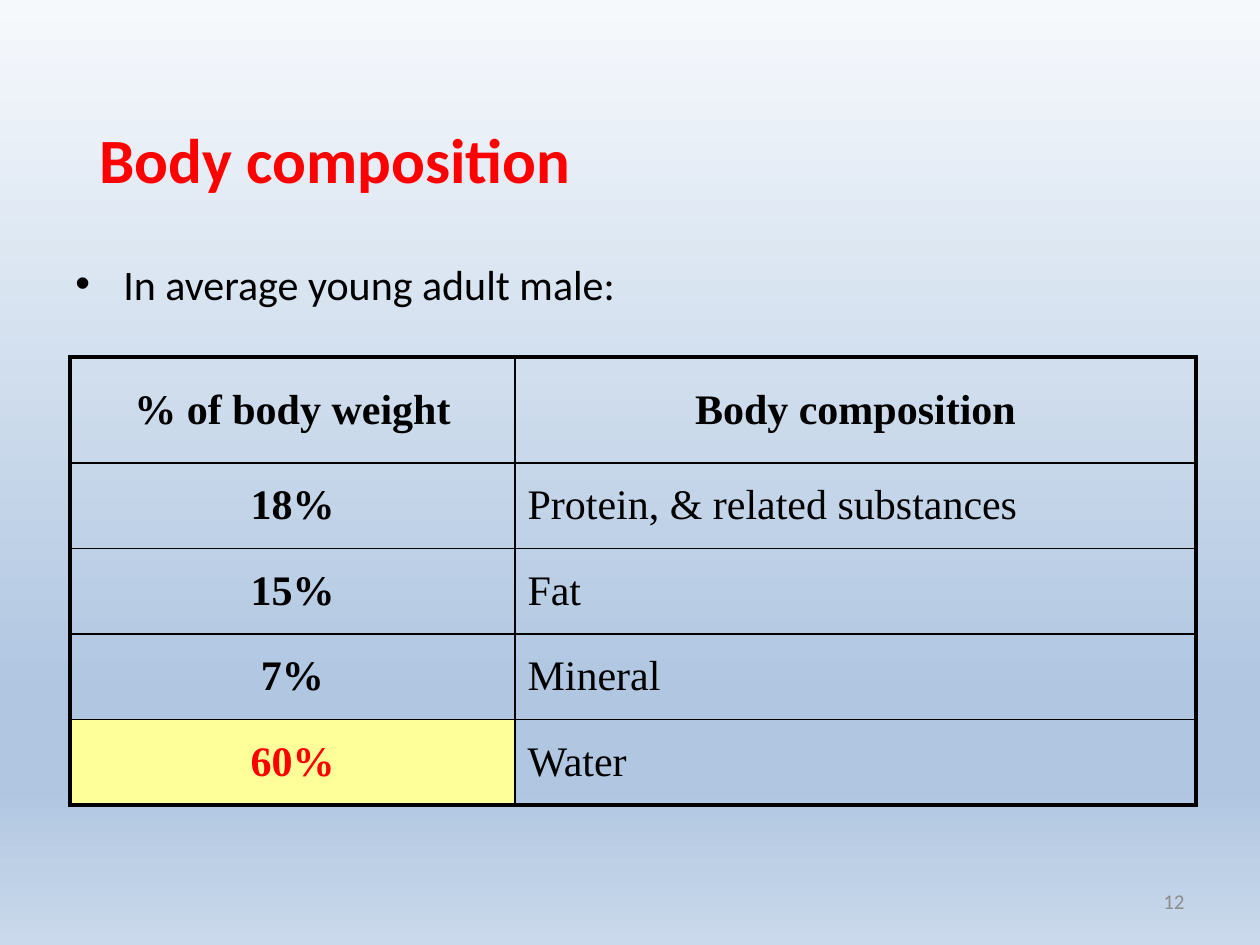
from lxml import etree
from pptx import Presentation
from pptx import util as u
from pptx.dml.color import RGBColor
from pptx.enum import text as t
from pptx.oxml.ns import qn

PX = 914400 / 126
BLACK, RED, GREY, YELLOW = "000000", "FF0000", "8C8C8C", "FFFF99"
SERIF = "Times New Roman"
STOPS = [(0, "F6F9FC"), (74, "B0C6E1"), (83, "B0C6E1"), (100, "CAD9EB")]
TITLE = "Body composition"
INTRO = "In average young adult male:"
NUMBER = "12"
ROWS = [
    ("% of body weight", "Body composition"),
    ("18%", "Protein, & related substances"),
    ("15%", "Fat"),
    ("7%", "Mineral"),
    ("60%", "Water"),
]
LEFT, TOP, HIGH, HEAD = 70, 357, 448, 106
COLS = [445, 681]
THIN, THICK = 1, 2.25


def px(n):
    return u.Emu(round(n * PX))


def rgb(code):
    return RGBColor.from_string(code)


def add(parent, tag, **attrs):
    node = etree.SubElement(parent, qn(tag))
    for key, val in attrs.items():
        node.set(key, str(val))
    return node


def write(frame, words, size=24, color=BLACK, bold=False, font="Calibri",
          align=t.PP_ALIGN.LEFT, bullet=None):
    frame.word_wrap = True
    para = frame.paragraphs[0]
    para.alignment = align
    if bullet:
        props = para._p.get_or_add_pPr()
        props.set("marL", str(px(48)))
        props.set("indent", str(-px(48)))
        add(props, "a:buFont", typeface="Arial")
        add(props, "a:buChar", char=bullet)
    run = para.add_run()
    run.text = words
    run.font.size = u.Pt(size)
    run.font.name = font
    run.font.bold = bold
    run.font.color.rgb = rgb(color)


def box(slide, area, words, anchor=t.MSO_ANCHOR.MIDDLE, **style):
    frame = slide.shapes.add_textbox(*map(px, area)).text_frame
    frame.vertical_anchor = anchor
    write(frame, words, **style)


def border(cell, sides):
    """Draw black cell borders; sides maps L, R, T, B to points."""
    props = cell._tc.get_or_add_tcPr()
    for side, width in sides.items():
        line = add(props, "a:ln" + side, w=u.Pt(width))
        add(add(line, "a:solidFill"), "a:srgbClr", val=BLACK)


def backdrop(slide):
    fill = slide.background.fill
    fill.gradient()
    fill.gradient_angle = 270
    stops = slide.element.find(".//" + qn("a:gsLst"))
    for old in list(stops):
        stops.remove(old)
    for pos, color in STOPS:
        add(add(stops, "a:gs", pos=pos * 1000), "a:srgbClr", val=color)


def grid(slide):
    last = len(ROWS) - 1
    area = map(px, (LEFT, TOP, sum(COLS), HIGH))
    table = slide.shapes.add_table(len(ROWS), len(COLS), *area).table
    table.first_row = table.horz_banding = False
    for col, width in zip(table.columns, COLS):
        col.width = px(width)
    for r, row in enumerate(ROWS):
        table.rows[r].height = px(HEAD if r == 0 else (HIGH - HEAD) / last)
        for c, words in enumerate(row):
            cell = table.cell(r, c)
            cell.vertical_anchor = t.MSO_ANCHOR.MIDDLE
            strong = r == 0 or c == 0
            key = r == last and c == 0
            write(cell.text_frame, words, font=SERIF, bold=strong,
                  color=RED if key else BLACK,
                  align=t.PP_ALIGN.CENTER if strong else t.PP_ALIGN.LEFT)
            border(cell, {"L": THICK if c == 0 else THIN,
                          "R": THICK if c == 1 else THIN,
                          "T": THICK if r == 0 else THIN,
                          "B": THICK if r == last else THIN})
            if key:
                cell.fill.solid()
                cell.fill.fore_color.rgb = rgb(YELLOW)
            else:
                cell.fill.background()


def main():
    deck = Presentation()
    deck.slide_width, deck.slide_height = px(1260), px(945)
    slide = deck.slides.add_slide(deck.slide_layouts[6])
    backdrop(slide)
    box(slide, (63, 252, 1133, 74), INTRO, anchor=t.MSO_ANCHOR.TOP, bullet="•")
    box(slide, (87, 82, 1040, 152), TITLE, size=36, color=RED, bold=True)
    grid(slide)
    box(slide, (903, 876, 294, 50), NUMBER, size=12, color=GREY,
        align=t.PP_ALIGN.RIGHT)
    deck.save("out.pptx")


if __name__ == "__main__":
    main()
